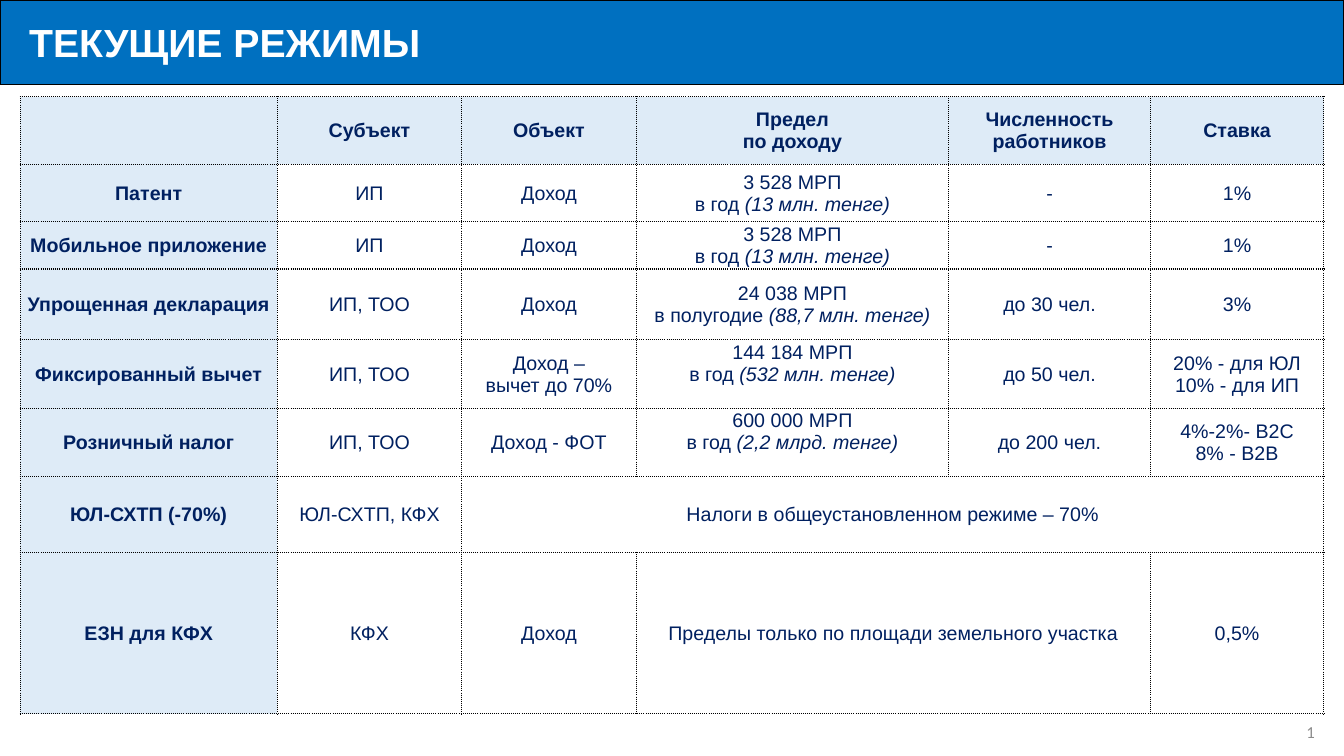
import pptx
import pptx.dml.color
import pptx.enum.dml
import pptx.enum.shapes
import pptx.enum.text
import pptx.oxml
import pptx.oxml.ns
import pptx.util
from pptx.util import Inches

ALIGN = pptx.enum.text.PP_ALIGN
MIDDLE = pptx.enum.text.MSO_ANCHOR.MIDDLE

HEADER_FILL, BODY_FILL, TABLE_TEXT = "DEEBF7", "FFFFFF", "002060"
LIMIT_COLUMN = 3
COLUMN_WIDTHS = [2.55, 1.83, 1.73, 3.1, 2, 1.72]
ROW_HEIGHTS = [0.67, 0.57, 0.47, 0.7, 0.68, 0.68, 0.75, 1.6]
RAISED_LIMIT_ROWS = (4, 5)  # limit text sits above the middle of the row

# "\n" starts a paragraph, "\v" breaks a line, None continues the cell to the left
REGIMES = [
    ["", "Субъект", "Объект", "Предел\nпо доходу", "Численность работников", "Ставка"],
    ["Патент", "ИП", "Доход", "3 528 МРП\nв год (13 млн. тенге)", "-", "1%"],
    ["Мобильное приложение", "ИП", "Доход", "3 528 МРП\nв год (13 млн. тенге)", "-", "1%"],
    ["Упрощенная декларация", "ИП, ТОО", "Доход",
     "24 038 МРП\nв полугодие (88,7 млн. тенге)", "до 30 чел.", "3%"],
    ["Фиксированный вычет", "ИП, ТОО", "Доход –\nвычет до 70%",
     "144 184 МРП\vв год (532 млн. тенге)", "до 50 чел.", "20% - для ЮЛ\n10% - для ИП"],
    ["Розничный налог", "ИП, ТОО", "Доход - ФОТ",
     "600 000 МРП\vв год (2,2 млрд. тенге)", "до 200 чел.", "4%-2%- В2С\n8% - В2В"],
    ["ЮЛ-СХТП (-70%)", "ЮЛ-СХТП, КФХ", "Налоги в общеустановленном режиме – 70%",
     None, None, None],
    ["ЕЗН для КФХ", "КФХ", "Доход", "Пределы только по площади земельного участка",
     None, "0,5%"],
]


def rgb(hex_color):
    return pptx.dml.color.RGBColor.from_string(hex_color)


def style_run(run, font_name, size, color, bold=False, italic=False):
    font = run.font
    font.name, font.size = font_name, pptx.util.Pt(size)
    font.bold, font.italic = bold, italic
    font.color.rgb = rgb(color)


def add_title_bar(slide, left, top, width, height):
    bar = slide.shapes.add_shape(pptx.enum.shapes.MSO_SHAPE.RECTANGLE,
                                 left, top, width, height)
    bar.shadow.inherit = False
    bar.fill.solid()
    bar.fill.fore_color.rgb = rgb("0070C0")
    bar.line.color.rgb = rgb("000000")
    bar.line.width = pptx.util.Pt(1)
    frame = bar.text_frame
    frame.vertical_anchor = MIDDLE
    frame.margin_left = Inches(0.29)
    frame.text = "ТЕКУЩИЕ РЕЖИМЫ"
    title = frame.paragraphs[0]
    title.alignment = ALIGN.LEFT
    style_run(title.runs[0], "Arial", 28, "FFFFFF", bold=True)


def add_dotted_borders(cell):
    properties = cell._tc.get_or_add_tcPr()
    for position, side in enumerate(("lnL", "lnR", "lnT", "lnB")):
        border = pptx.oxml.parse_xml(
            f'<a:{side} {pptx.oxml.ns.nsdecls("a")} w="12700">'
            '<a:solidFill><a:srgbClr val="000000"/></a:solidFill>'
            f'<a:prstDash val="sysDot"/></a:{side}>')
        properties.insert(position, border)


def fill_cell(cell, text, is_header, italic_note):
    cell.vertical_anchor = MIDDLE
    cell.margin_left = cell.margin_right = cell.margin_top = Inches(0.01)
    cell.margin_bottom = 0
    cell.fill.solid()
    cell.fill.fore_color.rgb = rgb(HEADER_FILL if is_header else BODY_FILL)
    add_dotted_borders(cell)
    if not text:
        return
    cell.text_frame.text = text
    for paragraph in cell.text_frame.paragraphs:
        paragraph.alignment = ALIGN.CENTER
        for run in paragraph.runs:
            style_run(run, "Arial", 14, TABLE_TEXT, bold=is_header)
        if italic_note and "(" in paragraph.text:
            # The amount in brackets becomes an italic run of its own
            last_run = paragraph.runs[-1]
            lead, amount = last_run.text.split("(")
            last_run.text = lead
            note = paragraph.add_run()
            note.text = "(" + amount
            style_run(note, "Arial", 14, TABLE_TEXT, italic=True)


def add_regimes_table(slide, left, top, width, height):
    table = slide.shapes.add_table(len(ROW_HEIGHTS), len(COLUMN_WIDTHS),
                                   left, top, width, height).table
    table.horz_banding = False
    for column, column_width in zip(table.columns, COLUMN_WIDTHS):
        column.width = Inches(column_width)
    for row, row_height in zip(table.rows, ROW_HEIGHTS):
        row.height = Inches(row_height)

    for r, regime in enumerate(REGIMES):
        for c, text in enumerate(regime):
            fill_cell(table.cell(r, c), text, is_header=r == 0 or c == 0,
                      italic_note=c == LIMIT_COLUMN)
    for r in RAISED_LIMIT_ROWS:
        table.cell(r, LIMIT_COLUMN).margin_bottom = Inches(0.22)

    # Cells that span several columns
    for r, first, last in ((6, 2, 5), (7, 3, 4)):
        table.cell(r, first).merge(table.cell(r, last))


def add_page_number(slide, left, top, width, height):
    frame = slide.shapes.add_textbox(left, top, width, height).text_frame
    frame.word_wrap = True
    frame.vertical_anchor = MIDDLE
    frame.text = "1"
    number = frame.paragraphs[0]
    number.alignment = ALIGN.RIGHT
    style_run(number.runs[0], "Calibri", 12, "8C8C8C")


def main():
    presentation = pptx.Presentation()
    presentation.slide_width = Inches(13.33)
    presentation.slide_height = Inches(7.5)
    slide = presentation.slides.add_slide(presentation.slide_layouts[6])
    add_title_bar(slide, 0, 0, presentation.slide_width, Inches(0.84))
    add_regimes_table(slide, Inches(0.2), Inches(0.96),
                      Inches(sum(COLUMN_WIDTHS)), Inches(sum(ROW_HEIGHTS)))
    add_page_number(slide, Inches(10.14), Inches(7.06), Inches(3), Inches(0.4))
    presentation.save("out.pptx")


if __name__ == "__main__":
    main()
